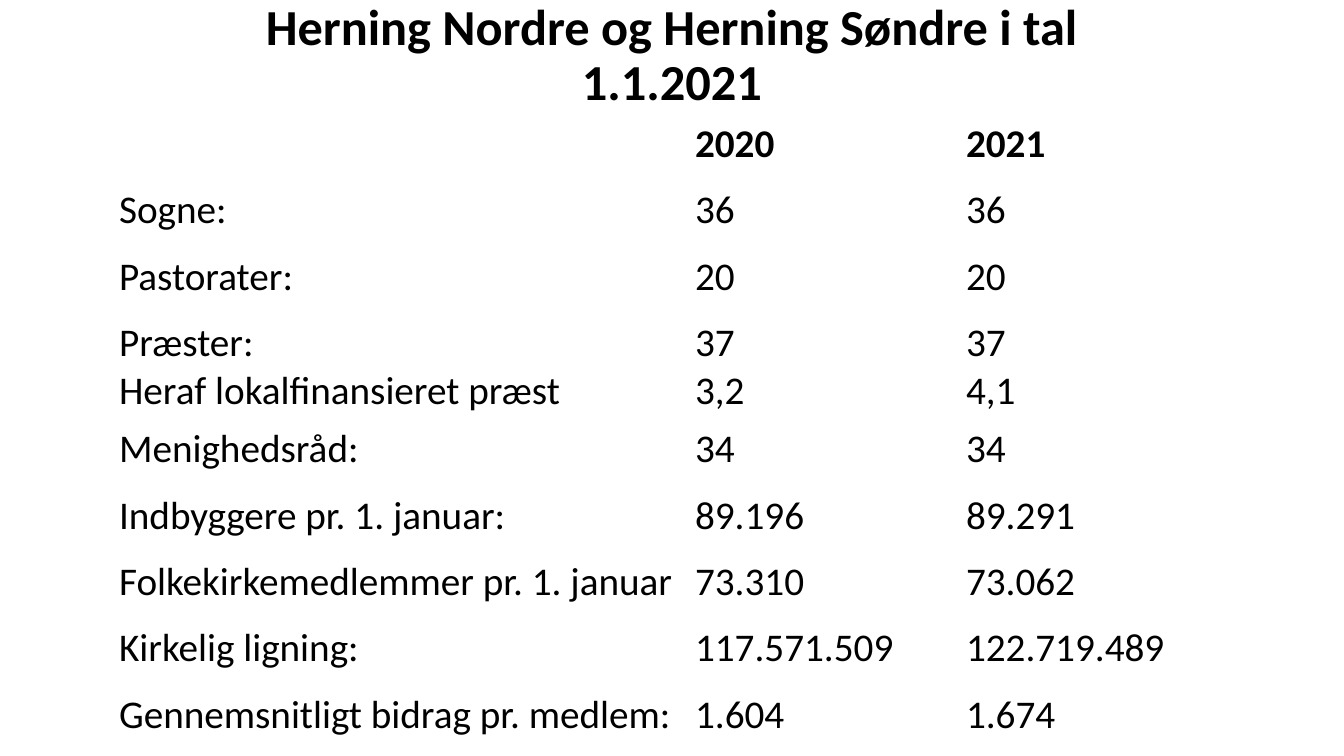
from lxml.etree import SubElement
from pptx import Presentation
from pptx.dml.color import RGBColor
from pptx.enum.text import MSO_ANCHOR, MSO_AUTO_SIZE, PP_ALIGN
from pptx.oxml.ns import qn
from pptx.util import Pt

EMU_PER_PX = 914400 / 100.8
BLACK, WHITE = "000000", "FFFFFF"
COLUMN_WIDTHS = [576, 271, 238]
ROWS = [
    ("", "2020", "2021"),
    ("Sogne:", "36", "36"),
    ("Pastorater:", "20", "20"),
    ("Præster:\nHeraf lokalfinansieret præst", "37\n3,2", "37\n4,1"),
    ("Menighedsråd:", "34", "34"),
    ("Indbyggere pr. 1. januar:", "89.196", "89.291"),
    ("Folkekirkemedlemmer pr. 1. januar", "73.310", "73.062"),
    ("Kirkelig ligning:", "117.571.509", "122.719.489"),
    ("Gennemsnitligt bidrag pr. medlem:", "1.604", "1.674"),
]


def px(length):
    return round(length * EMU_PER_PX)


def color(hex_string):
    return RGBColor.from_string(hex_string)


def set_attributes(target, values):
    for name, value in values.items():
        setattr(target, name, value)


def format_text(text_frame, size, bold):
    for paragraph in text_frame.paragraphs:
        set_attributes(paragraph.font, {"name": "Calibri", "size": Pt(size), "bold": bold})
        for run in paragraph.runs:
            set_attributes(run.font, {"name": "Calibri", "size": Pt(size), "bold": bold})
            run.font.color.rgb = color(BLACK)


def add_borders(cell):
    """Put a thin white line on each side, ahead of the cell's fill."""
    properties = cell._tc.get_or_add_tcPr()
    for position, side in enumerate(("a:lnL", "a:lnR", "a:lnT", "a:lnB")):
        line = SubElement(properties, qn(side), w=str(Pt(1)))
        fill = SubElement(line, qn("a:solidFill"))
        SubElement(fill, qn("a:srgbClr"), val=WHITE)
        properties.insert(position, line)


def place_title(slide, left, top, width, height):
    title = slide.shapes.title
    set_attributes(title, {"left": px(left), "top": px(top),
                           "width": px(width), "height": px(height)})
    text_frame = title.text_frame
    text_frame.text = "Herning Nordre og Herning Søndre i tal 1.1.2021"
    set_attributes(text_frame, {"word_wrap": True, "auto_size": MSO_AUTO_SIZE.NONE,
                                "vertical_anchor": MSO_ANCHOR.BOTTOM})
    set_attributes(text_frame.paragraphs[0], {"alignment": PP_ALIGN.CENTER,
                                              "line_spacing": 0.9})
    format_text(text_frame, 36, True)


def add_figures_table(slide, left, top, height):
    frame = slide.shapes.add_table(len(ROWS), len(COLUMN_WIDTHS), px(left), px(top),
                                   px(sum(COLUMN_WIDTHS)), px(height))
    table = frame.table
    set_attributes(table, {"first_row": False, "horz_banding": False})
    for column, width in zip(table.columns, COLUMN_WIDTHS):
        column.width = px(width)
    for row_index, texts in enumerate(ROWS):
        for column_index, text in enumerate(texts):
            cell = table.cell(row_index, column_index)
            cell.text = text
            cell.fill.background()
            add_borders(cell)
            format_text(cell.text_frame, 28, row_index == 0)


def main():
    presentation = Presentation()
    set_attributes(presentation, {"slide_width": px(1344), "slide_height": px(756)})
    slide = presentation.slides.add_slide(presentation.slide_layouts.get_by_name("Title Only"))
    place_title(slide, 168, 36, 1008, 80)
    add_figures_table(slide, 109, 115, 598)
    presentation.save("out.pptx")


if __name__ == "__main__":
    main()
